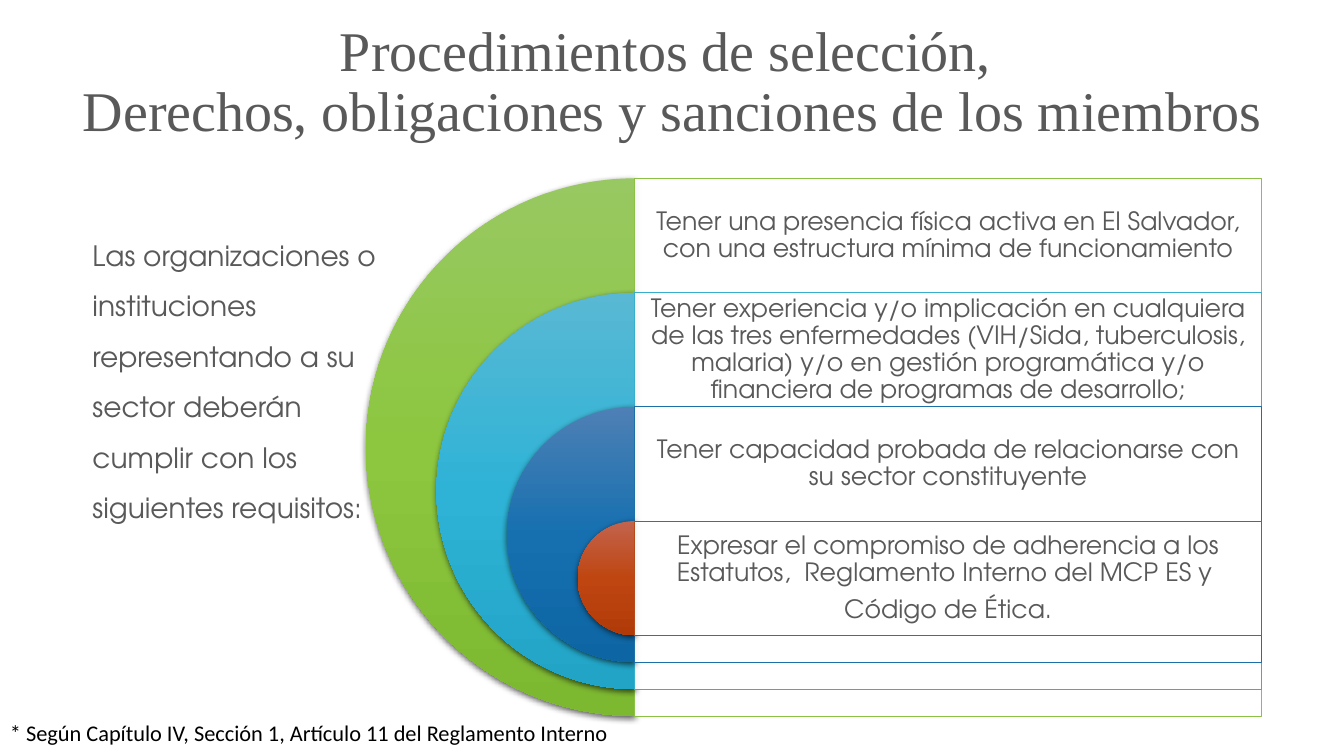
"""Build the slide on selection rules for member organizations."""
from copy import deepcopy
from lxml.etree import SubElement
from pptx import Presentation
from pptx.dml.color import RGBColor as RGB
from pptx.enum.shapes import MSO_SHAPE as SHAPE
from pptx.enum.text import MSO_ANCHOR as ANCHOR, MSO_AUTO_SIZE as AUTO, PP_ALIGN as ALIGN
from pptx.oxml.ns import qn
from pptx.util import Pt

GRAY = RGB(0x59, 0x59, 0x59)
BLACK = RGB(0, 0, 0)
WHITE = RGB(255, 255, 255)
SANS = "TeX Gyre Adventor"
LEVELS = [
    ([RGB(0x98, 0xC8, 0x62), RGB(0x8C, 0xC7, 0x3F), RGB(0x7D, 0xB8, 0x31)],
     RGB(0x8B, 0xC1, 0x45),
     ["Tener una presencia física activa en El Salvador, con una estructura mínima de funcionamiento"]),
    ([RGB(0x59, 0xB8, 0xD4), RGB(0x2E, 0xB3, 0xD6), RGB(0x21, 0xA4, 0xC6)],
     RGB(0x36, 0xAF, 0xCE),
     ["Tener experiencia y/o implicación en cualquiera de las tres enfermedades (VIH/Sida, "
      "tuberculosis, malaria) y/o en gestión programática y/o financiera de programas de desarrollo;"]),
    ([RGB(0x4E, 0x80, 0xB5), RGB(0x16, 0x70, 0xB0), RGB(0x0D, 0x65, 0xA3)],
     RGB(0x1D, 0x6F, 0xA9),
     ["Tener capacidad probada de relacionarse con su sector constituyente"]),
    ([RGB(0xC2, 0x63, 0x4D), RGB(0xBF, 0x46, 0x11), RGB(0xB1, 0x3B, 0x08)],
     RGB(0xB7, 0x49, 0x19),
     ["Expresar el compromiso de adherencia a los Estatutos,  Reglamento Interno del MCP ES y ",
      "Código de Ética."]),
]


def write(frame, lines, size, font, color, para, body):
    for key, val in body.items():
        setattr(frame, key, val)
    frame.text = "\n".join(lines)
    for par in frame.paragraphs:
        for key, val in para.items():
            setattr(par, key, val)
        for run in par.runs:
            for key, val in {"size": Pt(size), "name": font}.items():
                setattr(run.font, key, val)
            run.font.color.rgb = color


def child(node, tag, **atts):
    return SubElement(node, qn(tag), atts)


prs = Presentation()
prs.slide_width, prs.slide_height = Pt(960), Pt(540)
slide = prs.slides.add_slide(prs.slide_layouts[5])
shapes = slide.shapes

title = shapes.title
spot = {"left": Pt(27.4), "top": Pt(7.2), "width": Pt(905.8), "height": Pt(104.4)}
for key, val in spot.items():
    setattr(title, key, val)
write(title.text_frame,
      ["Procedimientos de selección, \vDerechos, obligaciones y sanciones de los miembros"],
      40, "Times New Roman", GRAY,
      {"alignment": ALIGN.CENTER, "line_spacing": 0.9},
      {"vertical_anchor": ANCHOR.MIDDLE, "word_wrap": True, "auto_size": AUTO.NONE})

intro = shapes.add_textbox(Pt(59), Pt(154.8), Pt(221), Pt(257))
write(intro.text_frame,
      ["Las organizaciones o instituciones representando a su sector deberán cumplir con "
       "los siguientes requisitos:"],
      20, SANS, GRAY, {"line_spacing": 1.5},
      {"word_wrap": True, "auto_size": AUTO.SHAPE_TO_FIT_TEXT})

mid, top, row, wide = 453.4, 127.4, 81.6, 447.6
pad = Pt(5)
for i, (stops, edge, lines) in enumerate(LEVELS):
    size = 384 - 100.8 * i
    y = top + row * i

    pie = shapes.add_shape(SHAPE.PIE, Pt(mid - size / 2), Pt(y), Pt(size), Pt(size))
    pie.adjustments[0], pie.adjustments[1] = 54, 162
    pie.line.fill.background()
    pie.fill.gradient()
    pie.fill.gradient_angle = 270
    first = pie._element.spPr.find(".//" + qn("a:gs"))
    first.addnext(deepcopy(first))
    for stop, color, pos in zip(pie.fill.gradient_stops, stops, (0, 0.5, 1)):
        stop.color.rgb = color
        stop.position = pos
    pie.shadow.inherit = False
    glow = child(pie._element.spPr.find(qn("a:effectLst")), "a:outerShdw",
                 blurRad=str(Pt(4.5)), dist=str(Pt(1.5)), dir="5400000", rotWithShape="0")
    child(child(glow, "a:srgbClr", val="000000"), "a:alpha", val="63000")

    panel = shapes.add_shape(SHAPE.RECTANGLE, Pt(mid), Pt(y), Pt(wide), Pt(size))
    panel.shadow.inherit = False
    panel.fill.solid()
    panel.fill.fore_color.rgb = WHITE
    child(panel._element.spPr.find(".//" + qn("a:srgbClr")), "a:alpha", val="90000")
    panel.line.color.rgb = edge
    panel.line.width = Pt(0.5)

    label = shapes.add_textbox(Pt(mid), Pt(y), Pt(wide), Pt(row))
    write(label.text_frame, lines, 18, SANS, GRAY,
          {"alignment": ALIGN.CENTER, "line_spacing": 0.9, "space_after": Pt(6.3)},
          {"word_wrap": True, "vertical_anchor": ANCHOR.MIDDLE, "margin_left": pad,
           "margin_right": pad, "margin_top": pad, "margin_bottom": pad})

note = shapes.add_textbox(Pt(0), Pt(510), Pt(447), Pt(26.6))
write(note.text_frame, ["* Según Capítulo IV, Sección 1, Artículo 11 del Reglamento Interno"],
      16, "Calibri", BLACK, {},
      {"word_wrap": False, "auto_size": AUTO.SHAPE_TO_FIT_TEXT})

prs.save("out.pptx")
